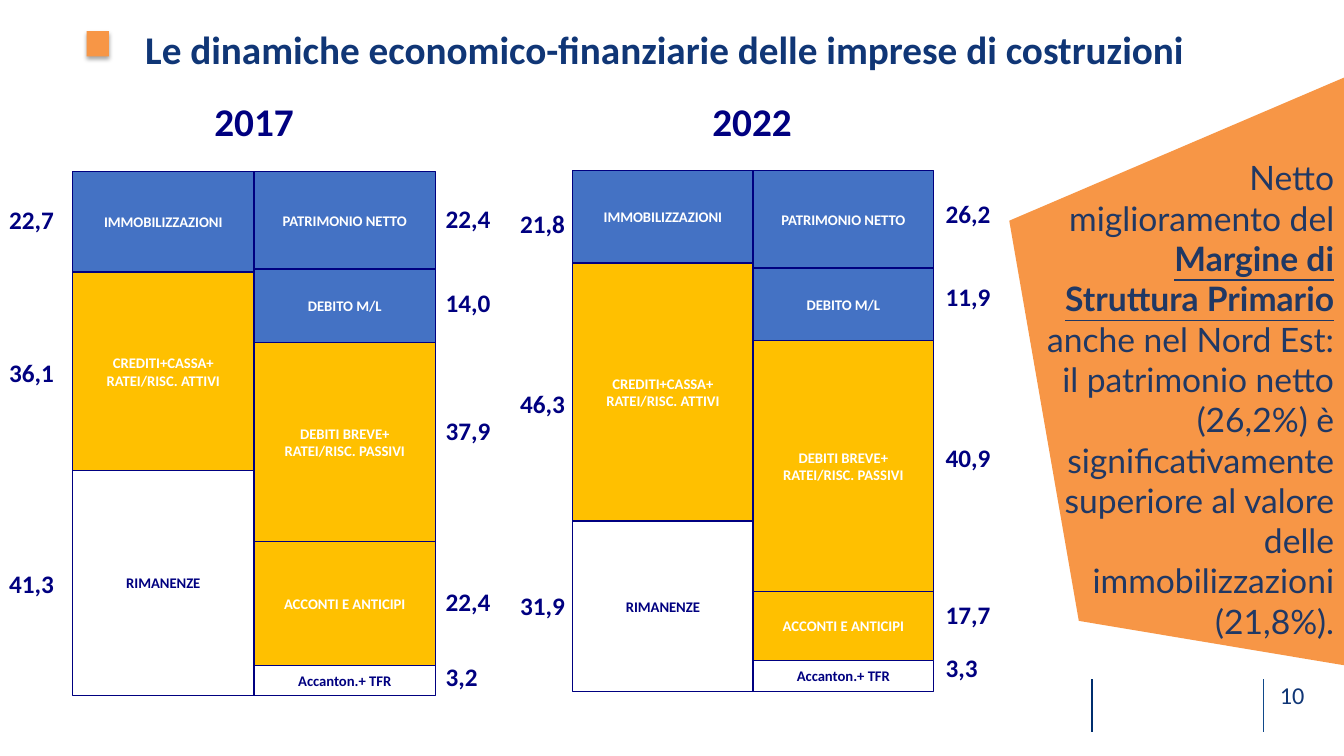
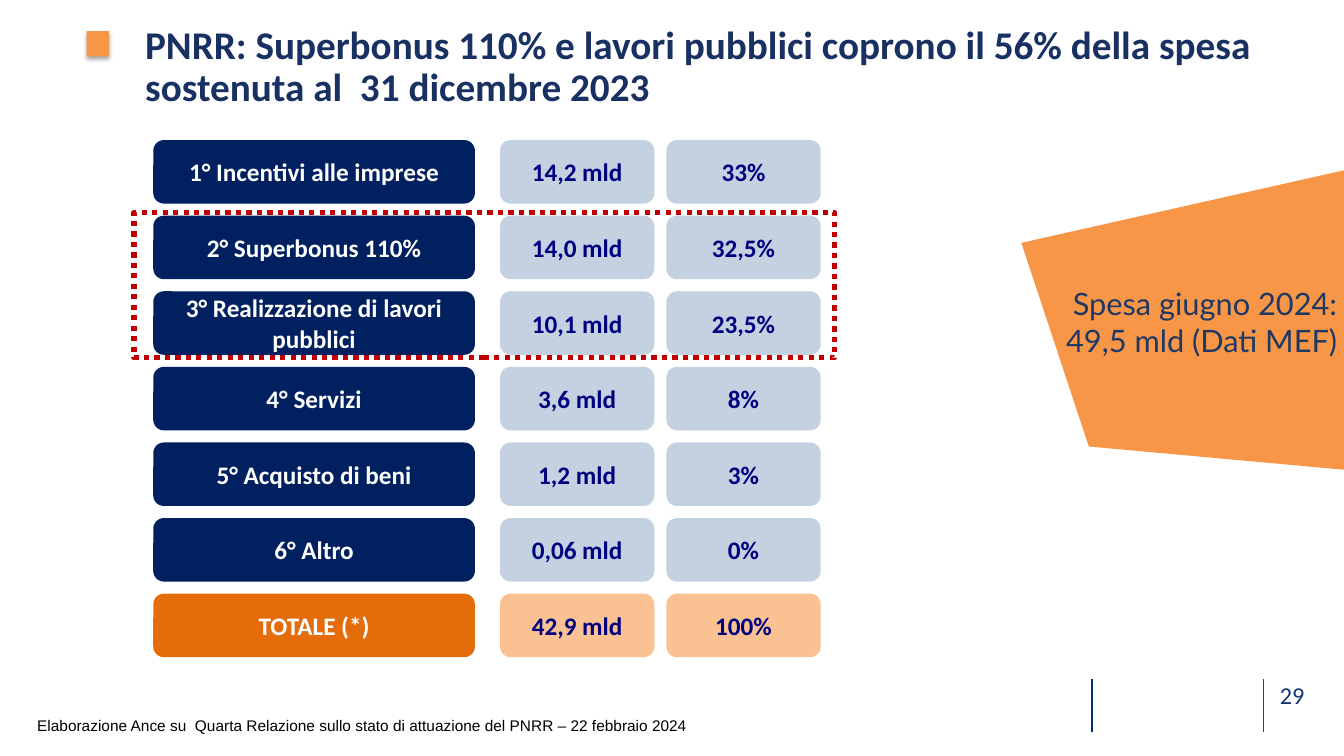
from dataclasses import dataclass

from lxml import etree
from pptx import Presentation
from pptx import util as u
from pptx.dml.color import RGBColor
from pptx.enum import shapes as kinds, text as texts
from pptx.oxml.ns import qn

PX = 9144  # 100 px to the inch
LEFT, MID, RIGHT = texts.PP_ALIGN.LEFT, texts.PP_ALIGN.CENTER, texts.PP_ALIGN.RIGHT
TOP, CENTRE = texts.MSO_ANCHOR.TOP, texts.MSO_ANCHOR.MIDDLE
RECT, ROUND = kinds.MSO_SHAPE.RECTANGLE, kinds.MSO_SHAPE.ROUNDED_RECTANGLE


@dataclass(frozen=True)
class Theme:
    font: str = "Calibri"
    note: str = "Lato"
    small: str = "Arial"
    white: str = "FFFFFF"
    black: str = "000000"
    navy: str = "000080"
    title: str = "103676"
    dark: str = "183062"
    ink: str = "203864"
    deep: str = "002060"
    rule: str = "11498A"
    bar: str = "002E6E"
    blue: str = "4472C4"
    gold: str = "FFC000"
    orange: str = "F79646"
    total: str = "E46C0A"
    red: str = "C00000"
    head_pt: float = 28
    body_pt: float = 18
    block_pt: float = 10.5
    page_pt: float = 17.3
    note_pt: float = 24
    brief_pt: float = 22
    foot_pt: float = 11


T = Theme()

ASSETS = [("IMMOBILIZZAZIONI", T.blue), ("CREDITI+CASSA+\nRATEI/RISC. ATTIVI", T.gold),
          ("RIMANENZE", T.white)]
FUNDS = [("PATRIMONIO NETTO", T.blue), ("DEBITO M/L", T.blue),
         ("DEBITI BREVE+\nRATEI/RISC. PASSIVI", T.gold),
         ("ACCONTI E ANTICIPI", T.gold), ("Accanton.+ TFR", T.white)]

# Each block: height, value, top of the value
SHEETS = [
    dict(year="2017", left=72, top=170, wide=180, year_x=182, tags=(9, 442),
         assets=[(100, "22,7", 203), (197, "36,1", 354), (223, "41,3", 564)],
         funds=[(97, "22,4", 202), (73, "14,0", 285), (197, "37,9", 412),
                (123, "22,4", 582), (30, "3,2", 656)]),
    dict(year="2022", left=568, top=169, wide=179, year_x=676, tags=(516, 938),
         assets=[(92, "21,8", 207), (256, "46,3", 385), (169, "31,9", 586)],
         funds=[(97, "26,2", 197), (72, "11,9", 279), (249, "40,9", 439),
                (68, "17,7", 595), (31, "3,3", 647)]),
]

SPEND = [
    ("1° Incentivi alle imprese", "14,2 mld", "33%"),
    ("2° Superbonus 110%", "14,0 mld", "32,5%"),
    ("3° Realizzazione di lavori pubblici", "10,1 mld", "23,5%"),
    ("4° Servizi", "3,6 mld", "8%"),
    ("5° Acquisto di beni", "1,2 mld", "3%"),
    ("6° Altro", "0,06 mld", "0%"),
    ("TOTALE (*)", "42,9 mld", "100%"),
]


def px(*nums):
    return [u.Emu(n * PX) for n in nums]


def rgb(code):
    return RGBColor.from_string(code)


def style(font, form):
    for key, val in form.items():
        if key == "color":
            font.color.rgb = rgb(val)
        else:
            setattr(font, key, u.Pt(val) if key == "size" else val)


def form(size, color, name=T.font, bold=False):
    return dict(name=name, size=size, bold=bold, color=color)


def write(shape, body, look, align=LEFT, anchor=TOP, pad=(0, 0), space=None):
    """Fill a shape with text; body is a string or a list of (string, extra format)."""
    frame = shape.text_frame
    side, edge = px(*pad)
    for key, val in dict(word_wrap=True, auto_size=texts.MSO_AUTO_SIZE.NONE,
                         vertical_anchor=anchor, margin_left=side, margin_right=side,
                         margin_top=edge, margin_bottom=edge).items():
        setattr(frame, key, val)
    lines = [[(s, {})] for s in body.split("\n")] if isinstance(body, str) else [body]
    for i, runs in enumerate(lines):
        para = frame.add_paragraph() if i else frame.paragraphs[0]
        para.alignment = align
        if space:
            para.line_spacing = space
        for words, extra in runs:
            run = para.add_run()
            run.text = words
            style(run.font, {**look, **extra})


def paint(shape, fill=None, line=None, wide=1, alpha=None):
    shape.shadow.inherit = False
    if fill:
        shape.fill.solid()
        shape.fill.fore_color.rgb = rgb(fill)
    else:
        shape.fill.background()
    if alpha:
        tint = shape.fill._xPr.find(qn("a:solidFill"))[0]
        etree.SubElement(tint, qn("a:alpha"), val=str(alpha * 1000))
    if line:
        shape.line.color.rgb = rgb(line)
        shape.line.width = u.Pt(wide)
    else:
        shape.line.fill.background()
    return shape


def box(slide, area, kind=RECT, **look):
    return paint(slide.shapes.add_shape(kind, *px(*area)), **look)


def label(slide, area, body, look, **opts):
    write(slide.shapes.add_textbox(*px(*area)), body, look, **opts)


def poly(slide, first, *rest):
    pen = slide.shapes.build_freeform(*first, scale=PX)
    pen.add_line_segments(rest, close=True)
    paint(pen.convert_to_shape(), T.orange)


def rule(slide, x, color, wide):
    line = slide.shapes.add_connector(kinds.MSO_CONNECTOR.STRAIGHT, *px(x, 674, x, 726))
    line.line.color.rgb = rgb(color)
    line.line.width = u.Pt(wide)
    etree.SubElement(line.element.spPr, qn("a:effectLst"))
    return line


def brand(slide):
    """Draw the marker and footer rules, then move them to the slide's layout."""
    mark = box(slide, (86, 31, 22, 25), fill=T.orange)
    glow = etree.SubElement(mark.element.spPr.find(qn("a:effectLst")), qn("a:outerShdw"),
                            blurRad="39370", dist="22860", dir="5400000", rotWithShape="0")
    tint = etree.SubElement(glow, qn("a:srgbClr"), val=T.black)
    etree.SubElement(tint, qn("a:alpha"), val="35000")
    parts = [mark, rule(slide, 1253, T.rule, 1), rule(slide, 1083, T.bar, 1.5)]
    for num, part in enumerate(parts, 90):
        part.element.xpath(".//p:cNvPr")[0].set("id", str(num))
        slide.slide_layout.shapes.element.append(part.element)


def start(deck, title, page, color, tall, space=None):
    slide = deck.slides.add_slide(deck.slide_layouts[5])
    head = slide.shapes.title
    head.left, head.top, head.width, head.height = px(134, 20, 1163, tall)
    write(head, title, form(T.head_pt, color, bold=True), pad=(10, 5), space=space)
    label(slide, (1256, 675, 51, 31), page, form(T.page_pt, T.title), align=MID)
    return slide


def stack(slide, x, y, wide, tag, names, blocks):
    """Pile blocks downwards and set their values in a column at tag."""
    for (name, fill), (tall, value, mark) in zip(names, blocks):
        ink = T.navy if fill == T.white else T.white
        block = box(slide, (x, y, wide, tall), fill=fill, line=T.navy)
        write(block, name, form(T.block_pt, ink, bold=True), align=MID, anchor=CENTRE)
        label(slide, (tag, mark, 56, 30), value, form(T.body_pt, T.navy, bold=True))
        y += tall


def sheet(slide, year, left, top, wide, year_x, tags, assets, funds):
    label(slide, (year_x, 92, 140, 57), year, form(T.head_pt, T.navy, bold=True),
          align=MID, pad=(10, 5))
    stack(slide, left, top, wide, tags[0], ASSETS, assets)
    stack(slide, left + wide, top, wide, tags[1], FUNDS, funds)


def grid(slide):
    cols = [(152, 319), (496, 153), (661, 153)]
    for i, row in enumerate(SPEND):
        last = i == len(SPEND) - 1
        lead = dict(fill=T.total if last else T.deep)
        cell = dict(fill=T.orange, alpha=59) if last else dict(fill=T.rule, alpha=25)
        for j, ((x, wide), words) in enumerate(zip(cols, row)):
            pill = box(slide, (x, 139 + 75 * i, wide, 63), ROUND, **(cell if j else lead))
            write(pill, words, form(T.body_pt, T.navy if j else T.white, bold=True),
                  align=MID, anchor=CENTRE)


def balance(deck):
    slide = start(deck, "Le dinamiche economico-finanziarie delle imprese di costruzioni",
                  "10", T.title, 57)
    brand(slide)
    poly(slide, (1333, 77), (1001, 219), (1070, 616), (1333, 660))
    note = [("Netto miglioramento del ", {}),
            ("Margine di Struttura Primario ", dict(bold=True, underline=True)),
            ("anche nel Nord Est: il patrimonio netto (26,2%) è significativamente "
             "superiore al valore delle immobilizzazioni (21,8%).", {})]
    label(slide, (1022, 151, 311, 495), note, form(T.note_pt, T.ink, T.note),
          align=RIGHT, pad=(10, 5))
    for data in SHEETS:
        sheet(slide, **data)


def spending(deck):
    slide = start(deck, "PNRR: Superbonus 110% e lavori pubblici coprono il 56% della spesa "
                  "sostenuta al  31 dicembre 2023", "29", T.dark, 95, 0.9)
    grid(slide)
    frame = box(slide, (133, 211, 695, 144), line=T.red, wide=3.75)
    etree.SubElement(frame.line._get_or_add_ln(), qn("a:prstDash"), val="sysDot")
    label(slide, (27, 706, 1072, 29),
          "Elaborazione Ance su  Quarta Relazione sullo stato di attuazione del PNRR "
          "– 22 febbraio 2024", form(T.foot_pt, T.black, T.small), pad=(10, 5))
    poly(slide, (1333, 169), (1013, 241), (1080, 443), (1333, 466))
    label(slide, (1017, 278, 319, 84), "Spesa giugno 2024: 49,5 mld (Dati MEF)",
          form(T.brief_pt, T.ink, T.note), align=RIGHT, pad=(10, 5))


def main():
    deck = Presentation()
    deck.slide_width, deck.slide_height = px(1333, 750)
    balance(deck)
    spending(deck)
    deck.save("out.pptx")


if __name__ == "__main__":
    main()
